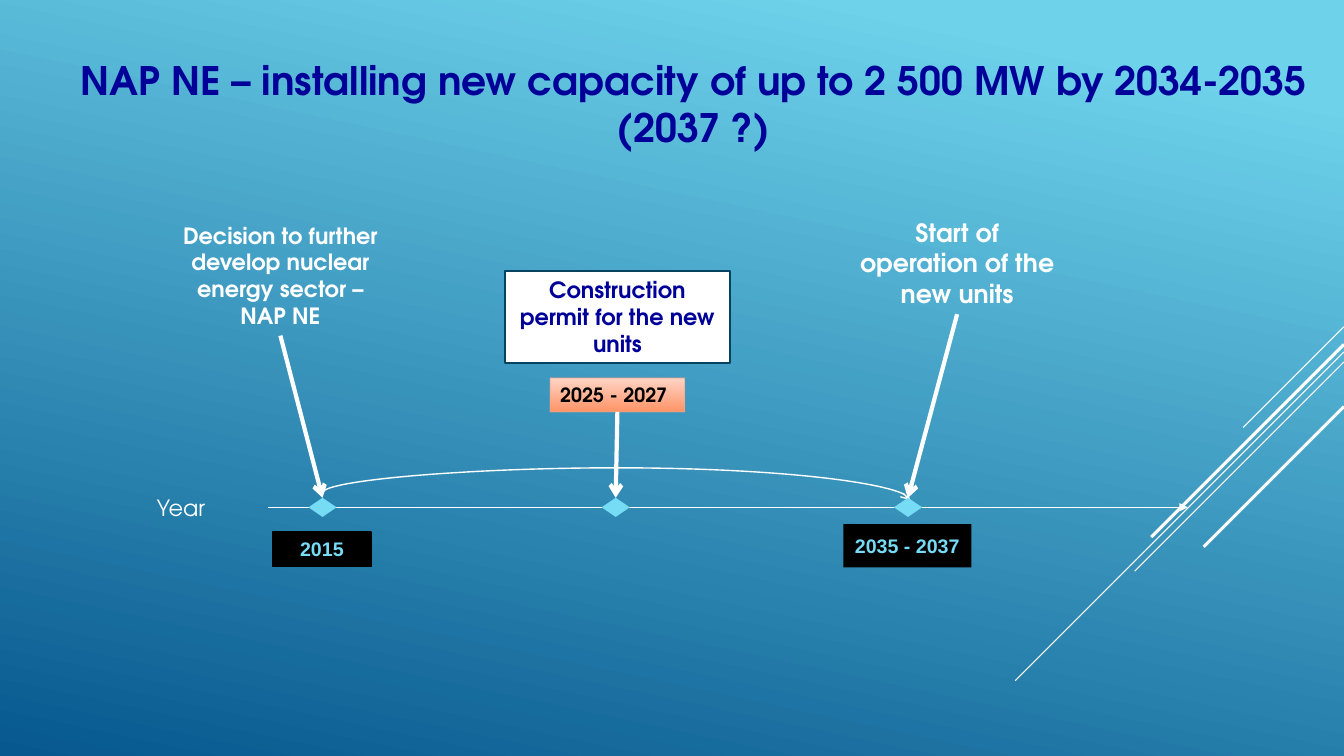
"""Build the nuclear capacity timeline slide on a grid of 160 columns by 90 rows."""
import pptx
import pptx.util
import pptx.dml.color
import pptx.enum.dml
import pptx.enum.shapes
import pptx.enum.text
import pptx.oxml
import pptx.oxml.ns

RGBColor = pptx.dml.color.RGBColor
SHAPE = pptx.enum.shapes.MSO_SHAPE
CONNECTOR = pptx.enum.shapes.MSO_CONNECTOR
ALIGN = pptx.enum.text.PP_ALIGN
ANCHOR = pptx.enum.text.MSO_ANCHOR
FIT = pptx.enum.text.MSO_AUTO_SIZE
Pt = pptx.util.Pt

WHITE = RGBColor(0xFF, 0xFF, 0xFF)
BLACK = RGBColor(0x00, 0x00, 0x00)
NAVY = RGBColor(0x00, 0x00, 0x99)
CYAN = RGBColor(0x76, 0xDB, 0xF4)
SKY = RGBColor(0x6E, 0xD2, 0xEB)
DEEP = RGBColor(0x06, 0x58, 0x8E)
PEACH = RGBColor(0xFF, 0xD4, 0xC6)
ORANGE = RGBColor(0xFF, 0x94, 0x67)
EDGE_ORANGE = RGBColor(0xEE, 0xA7, 0x8F)
EDGE_BLUE = RGBColor(0x05, 0x43, 0x61)

DISPLAY = "TeX Gyre Adventor"
UNIT = pptx.util.Inches(13.333) / 160
AXIS_ROW = 60.4
DIAMOND_W, DIAMOND_H = 3.36, 2.28


def grid(*values):
    """Turn columns or rows into lengths."""
    return [pptx.util.Emu(round(v * UNIT)) for v in values]


def set_attrs(obj, values):
    """Set attributes from a dict of format values."""
    for name, value in values.items():
        setattr(obj, name, value)


def add_xml(parent, tag, **attrs):
    """Append a drawing element with attributes."""
    el = pptx.oxml.parse_xml(f"<a:{tag} {pptx.oxml.ns.nsdecls('a')}/>")
    for name, value in attrs.items():
        el.set(name, value)
    parent.append(el)


def fill_gradient(fill, angle, stops):
    """Fill with a two-stop linear gradient."""
    fill.gradient()
    fill.gradient_angle = angle
    for stop, (position, color) in zip(fill.gradient_stops, stops):
        stop.position = position
        stop.color.rgb = color


def write(sp, text, size, color, name=DISPLAY, bold=True, align=ALIGN.CENTER, **frame):
    """Write one paragraph into a shape."""
    tf = sp.text_frame
    set_attrs(tf, {"word_wrap": True, "auto_size": FIT.SHAPE_TO_FIT_TEXT,
                   "vertical_anchor": ANCHOR.TOP, **frame})
    p = tf.paragraphs[0]
    p.alignment = align
    r = p.add_run()
    r.text = text
    set_attrs(r.font, {"size": Pt(size), "name": name, "bold": bold})
    r.font.color.rgb = color
    return sp


def add_label(s, box, text, size, color, **style):
    """Add a text box."""
    return write(s.shapes.add_textbox(*grid(*box)), text, size, color, **style)


def add_block(s, kind, box, fill=None, line=None, width=1.25):
    """Add a preset shape with a plain fill and an optional outline."""
    sp = s.shapes.add_shape(kind, *grid(*box))
    sp.shadow.inherit = False
    if fill is not None:
        sp.fill.solid()
        sp.fill.fore_color.rgb = fill
    if line is None:
        sp.line.fill.background()
    else:
        sp.line.color.rgb = line
        sp.line.width = Pt(width)
    return sp


def add_diamond(s, center):
    """Add a milestone marker on the axis."""
    return add_block(s, SHAPE.DIAMOND, (center - DIAMOND_W / 2, AXIS_ROW - DIAMOND_H / 2,
                                        DIAMOND_W, DIAMOND_H), CYAN)


def add_line(s, ends, width, tail=None, kind=CONNECTOR.STRAIGHT):
    """Add a white line with an optional arrowhead."""
    c = s.shapes.add_connector(kind, *grid(*ends))
    c.line.color.rgb = WHITE
    c.line.width = Pt(width)
    if tail:
        add_xml(c.line._get_or_add_ln(), "tailEnd", type=tail)
    add_xml(c._element.spPr, "effectLst")
    return c


def add_pointer(s, start, diamond):
    """Join the bottom of a label to the top of a marker."""
    c = add_line(s, (0, 0, 1, 1), 3, "arrow")
    c.begin_connect(start, 2)
    c.end_connect(diamond, 0)


def add_span(s):
    """Add the curved arrow from the first to the last marker."""
    c = add_line(s, (72.96, 24.12, 73.8, 94.08), 1, "arrow", CONNECTOR.CURVE)
    spPr = c._element.spPr
    set_attrs(spPr.xfrm, {"rot": 270, "flipH": True})
    add_xml(spPr.prstGeom.get_or_add_avLst(), "gd", name="adj1", fmla="val -355000")


def main():
    """Build and save the slide."""
    prs = pptx.Presentation()
    prs.slide_width, prs.slide_height = grid(160, 90)
    s = prs.slides.add_slide(prs.slide_layouts[6])
    fill_gradient(s.background.fill, 258, [(0.1, SKY), (1, DEEP)])

    for row, run, width in [(38.9, 12, 0.75), (41.9, 39.15, 0.75), (43.1, 24.9, 0.75),
                            (41, 22.95, 2.25), (48.4, 16.7, 2.25)]:
        add_line(s, (160, row, 160 - run, row + run), width)

    title = add_label(s, (1.44, 6.72, 156.24, 11.28),
                      "NAP NE – installing new capacity of up to 2 500 MW by 2034-2035 (2037 ?)",
                      28, NAVY, margin_left=0, margin_right=0, margin_top=0, margin_bottom=0)
    pPr = title.text_frame.paragraphs[0]._p.get_or_add_pPr()
    pPr.set("marL", str(pptx.util.Inches(0.5)))
    pPr.set("indent", "0")

    add_line(s, (31.9, AXIS_ROW, 141.4, AXIS_ROW), 1, "triangle")
    add_label(s, (17.5, 58.2, 8.8, 4.4), "Year", 16, WHITE, bold=False, align=ALIGN.LEFT)

    permit_year = add_block(s, SHAPE.RECTANGLE, (65.5, 45, 16, 4.05), None, EDGE_ORANGE, 0.75)
    fill_gradient(permit_year.fill, 270, [(0, PEACH), (1, ORANGE)])
    add_xml(permit_year.line.fill._xPr.solidFill[0], "alpha", val="60000")
    write(permit_year, "2025 - 2027", 14, BLACK, align=ALIGN.LEFT)
    write(add_block(s, SHAPE.RECTANGLE, (32.5, 63.36, 11.65, 4.1), BLACK, BLACK),
          "2015", 14, CYAN, "Arial")
    write(add_block(s, SHAPE.RECTANGLE, (100.4, 62.4, 15.24, 5.16), BLACK),
          "2035 - 2037", 14, CYAN, "Arial", word_wrap=False, auto_size=FIT.NONE,
          vertical_anchor=ANCHOR.MIDDLE)

    add_span(s)
    decision = add_label(s, (19.7, 25.8, 27.36, 14.16),
                         "Decision to further develop nuclear energy sector – NAP NE", 16, WHITE)
    start = add_label(s, (100.4, 25.3, 27.1, 12.1), "Start of operation of the new units", 18, WHITE)
    write(add_block(s, SHAPE.RECTANGLE, (60.1, 32.3, 26.8, 10.9), WHITE, EDGE_BLUE),
          "Construction permit for the new units", 16, NAVY)
    for label, center in [(decision, 38.4), (permit_year, 73.3), (start, 108.1)]:
        add_pointer(s, label, add_diamond(s, center))

    prs.save("out.pptx")


if __name__ == "__main__":
    main()
